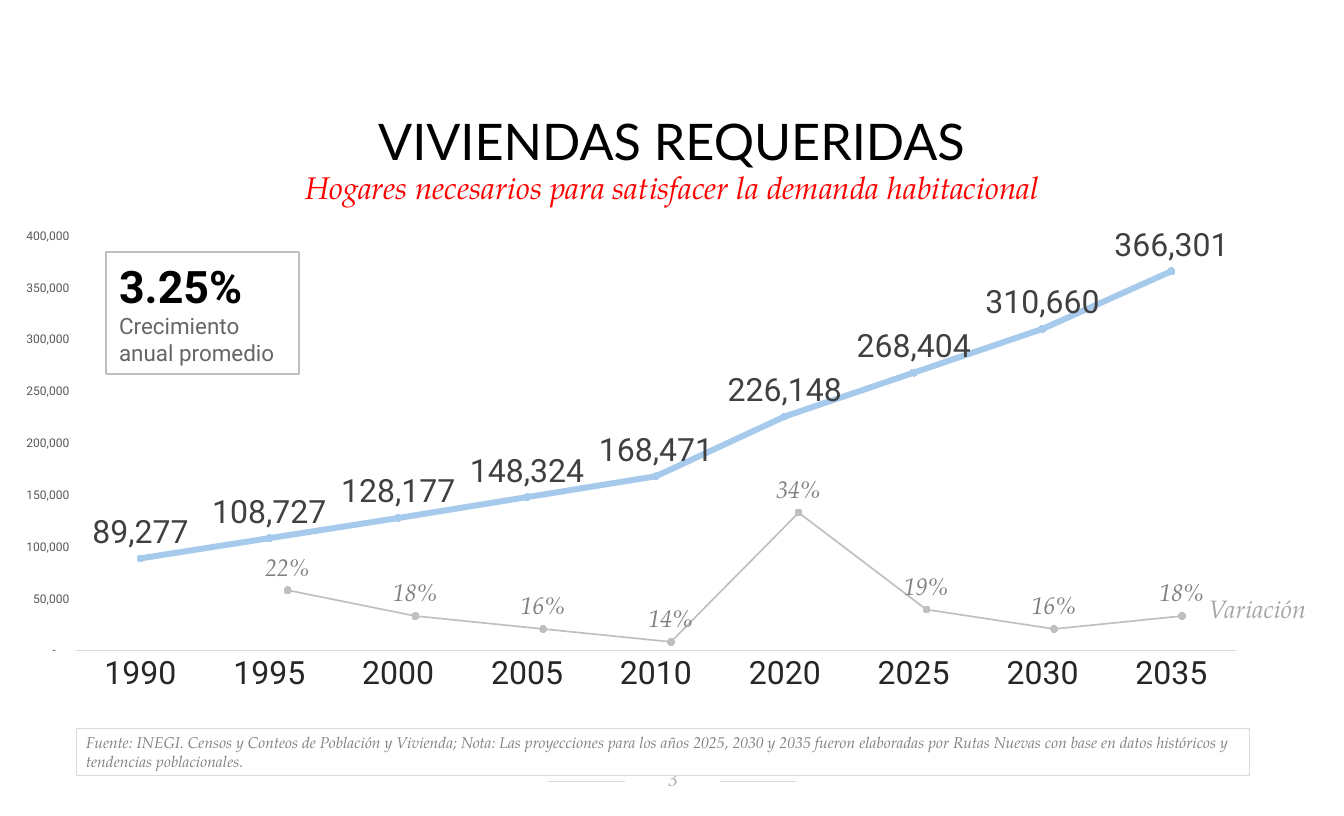
from lxml import etree
from pptx import Presentation
from pptx import util as u
from pptx.chart.data import CategoryChartData
from pptx.dml.color import RGBColor
from pptx.enum import chart as ch, shapes, text
from pptx.oxml.ns import qn

WHITE = RGBColor(0xFF, 0xFF, 0xFF)
BLACK = RGBColor(0, 0, 0)
RED = RGBColor(0xFF, 0, 0)
BLUE = RGBColor(0xA6, 0xCA, 0xEC)
INK = RGBColor(0x26, 0x26, 0x26)
DARK = RGBColor(0x40, 0x40, 0x40)
AXIS = RGBColor(0x59, 0x59, 0x59)
SLATE = RGBColor(0x66, 0x66, 0x66)
GRAY = RGBColor(0x80, 0x80, 0x80)
MUTED = RGBColor(0xA6, 0xA6, 0xA6)
SILVER = RGBColor(0xBF, 0xBF, 0xBF)
RULE = RGBColor(0xD9, 0xD9, 0xD9)
SERIF, SANS, TITLE = "TeX Gyre Pagella", "Roboto", "Lato"
LEFT, CENTER = text.PP_ALIGN.LEFT, text.PP_ALIGN.CENTER


def set_font(font, size, name, color, bold=False, italic=False):
    """Apply the whole text format to a font."""
    font.size, font.name = u.Pt(size), name
    font.bold, font.italic = bold, italic
    font.color.rgb = color


def set_line(line, color, width):
    """Give a line its colour and its width in points."""
    line.color.rgb = color
    line.width = u.Pt(width)


def add_text(tf, words, align=LEFT, after=0, first=True, **fmt):
    """Write one formatted paragraph into a text frame."""
    p = tf.paragraphs[0] if first else tf.add_paragraph()
    p.alignment, p.space_after = align, u.Pt(after)
    r = p.add_run()
    r.text = words
    set_font(r.font, **fmt)


def set_frame(tf, insets, anchor=text.MSO_ANCHOR.TOP):
    """Set wrapping, insets in inches and the vertical anchor."""
    tf.word_wrap = True
    tf.vertical_anchor = anchor
    tf.margin_left, tf.margin_top, tf.margin_right, tf.margin_bottom = map(u.Inches, insets)
    return tf


def add_box(s, at, insets=(0.1, 0.05, 0.1, 0.05)):
    """Add a text box and return its text frame."""
    return set_frame(s.shapes.add_textbox(*map(u.Inches, at)).text_frame, insets)


def add_panel(s, at, insets=(0.1, 0.05, 0.1, 0.05), border=None, width=0.75,
              anchor=text.MSO_ANCHOR.TOP):
    """Add a white rectangle and return its text frame."""
    sp = s.shapes.add_shape(shapes.MSO_SHAPE.RECTANGLE, *map(u.Inches, at))
    sp.shadow.inherit = False
    sp.fill.solid()
    sp.fill.fore_color.rgb = WHITE
    if border is None:
        sp.line.fill.background()
    else:
        set_line(sp.line, border, width)
    return set_frame(sp.text_frame, insets, anchor)


def add_rule(s, left, right, y):
    """Add a thin horizontal line without a shadow."""
    line = s.shapes.add_connector(shapes.MSO_CONNECTOR.STRAIGHT, *map(u.Inches, (left, y, right, y)))
    set_line(line.line, RULE, 0.75)
    etree.SubElement(line._element.spPr, qn("a:effectLst"))


def set_plot(chart, **fractions):
    """Fix the inner plot area as fractions of the chart."""
    area = chart._chartSpace.chart.plotArea
    for old in area.findall(qn("c:layout")):
        area.remove(old)
    layout = etree.Element(qn("c:layout"))
    manual = etree.SubElement(layout, qn("c:manualLayout"))
    settings = dict(layoutTarget="inner", xMode="edge", yMode="edge", **fractions)
    for tag, value in settings.items():
        etree.SubElement(manual, qn(f"c:{tag}")).set("val", str(value))
    area.insert(0, layout)


def add_line_chart(s, at, cats, vals, color, width, top, fmt, plot, label):
    """Add a one-series line chart with markers and labels above them."""
    data = CategoryChartData()
    data.categories = cats
    data.add_series("Series 1", vals)
    chart = s.shapes.add_chart(ch.XL_CHART_TYPE.LINE_MARKERS, *map(u.Inches, at), data).chart
    chart.has_legend = chart.has_title = False
    set_font(chart.font, 10, "Calibri", BLACK)
    set_plot(chart, **plot)
    lines = chart.plots[0]
    lines.vary_by_categories = False
    ser = lines.series[0]
    ser.smooth = False
    set_line(ser.format.line, color, width)
    ser.marker.style, ser.marker.size = ch.XL_MARKER_STYLE.CIRCLE, 5
    ser.marker.format.fill.solid()
    ser.marker.format.fill.fore_color.rgb = color
    set_line(ser.marker.format.line, color, 0.75)
    labels = ser.data_labels
    labels.show_value = True
    labels.position = ch.XL_LABEL_POSITION.ABOVE
    labels.number_format, labels.number_format_is_linked = fmt, False
    set_font(labels.font, **label)
    axis = chart.value_axis
    axis.minimum_scale, axis.maximum_scale = 0, top
    for ax in (axis, chart.category_axis):
        ax.has_major_gridlines = False
        ax.major_tick_mark = ax.minor_tick_mark = ch.XL_TICK_MARK.NONE
    return chart


def add_homes_chart(s):
    """Chart the homes required in each year."""
    years = ["1990", "1995", "2000", "2005", "2010", "2020", "2025", "2030", "2035"]
    homes = [89277, 108727, 128177, 148324, 168471, 226148, 268404, 310660, 366301]
    chart = add_line_chart(s, (0.08, 2.13, 12.95, 5.44), years, homes, BLUE, 4.5, 400000, "#,##0",
                           dict(x=0.055, y=0.061, w=0.933, h=0.794),
                           dict(size=24, name=SANS, color=DARK))
    axis = chart.value_axis
    axis.major_unit = 50000
    axis.format.line.fill.background()
    axis.tick_labels.number_format = '_-* #,##0_-;\\-* #,##0_-;_-* "-"??_-;_-@_'
    axis.tick_labels.number_format_is_linked = False
    set_font(axis.tick_labels.font, 9, SANS, AXIS)
    set_line(chart.category_axis.format.line, RULE, 0.75)
    set_font(chart.category_axis.tick_labels.font, 24, SANS, INK)


def add_change_chart(s):
    """Chart the change between periods on hidden axes."""
    changes = [0.22, 0.18, 0.16, 0.14, 0.34, 0.19, 0.16, 0.18]
    cats = [str(n) for n in range(1, len(changes) + 1)]
    chart = add_line_chart(s, (2.11, 4.91, 11.09, 2.72), cats, changes, SILVER, 1.25, 0.4, "0%",
                           dict(x=0.02, y=0.01, w=0.96, h=0.99),
                           dict(size=18, name=SERIF, color=GRAY, italic=True))
    chart.value_axis.visible = chart.category_axis.visible = False


def main():
    """Build the slide and save it."""
    prs = Presentation()
    prs.slide_width, prs.slide_height = u.Inches(14), u.Inches(8.5)
    s = prs.slides.add_slide(prs.slide_layouts[6])

    add_rule(s, 5.71, 8.29, 8.14)
    tf = add_panel(s, (6.51, 7.98, 0.99, 0.29), (0.1, 0.02, 0.09, 0.04),
                   anchor=text.MSO_ANCHOR.MIDDLE)
    add_text(tf, "3", CENTER, size=14.3, name=SERIF, color=MUTED, italic=True)
    add_text(add_panel(s, (0.8, 7.59, 12.22, 0.49), border=RULE),
             "Fuente: INEGI. Censos y Conteos de Población y Vivienda; Nota: Las proyecciones para "
             "los años 2025, 2030 y 2035 fueron elaboradas por Rutas Nuevas con base en datos "
             "históricos y tendencias poblacionales.",
             size=11.7, name=SERIF, color=GRAY, italic=True)
    add_text(add_box(s, (0.97, 1.1, 12.05, 0.75)), "VIVIENDAS REQUERIDAS", CENTER,
             size=37.8, name=TITLE, color=BLACK)
    add_text(add_box(s, (0.19, 1.7, 13.62, 0.49)),
             "Hogares necesarios para satisfacer la demanda habitacional", CENTER, 3.9,
             size=23.4, name=SERIF, color=RED, italic=True)
    add_homes_chart(s)
    add_change_chart(s)
    add_text(add_box(s, (12.57, 6.11, 1.31, 0.48), (0.02, 0.07, 0.14, 0.07)), "Variación",
             after=4.2, size=18.9, name=SERIF, color=MUTED, italic=True)
    tf = add_panel(s, (1.1, 2.62, 2.01, 1.28), (0.14, 0.07, 0.14, 0.07), SILVER, 1.5)
    add_text(tf, "3.25%", size=33.6, name=SANS, color=BLACK, bold=True)
    add_text(tf, "Crecimiento anual promedio", first=False, size=16.8, name=SANS, color=SLATE)

    prs.save("out.pptx")


if __name__ == "__main__":
    main()
